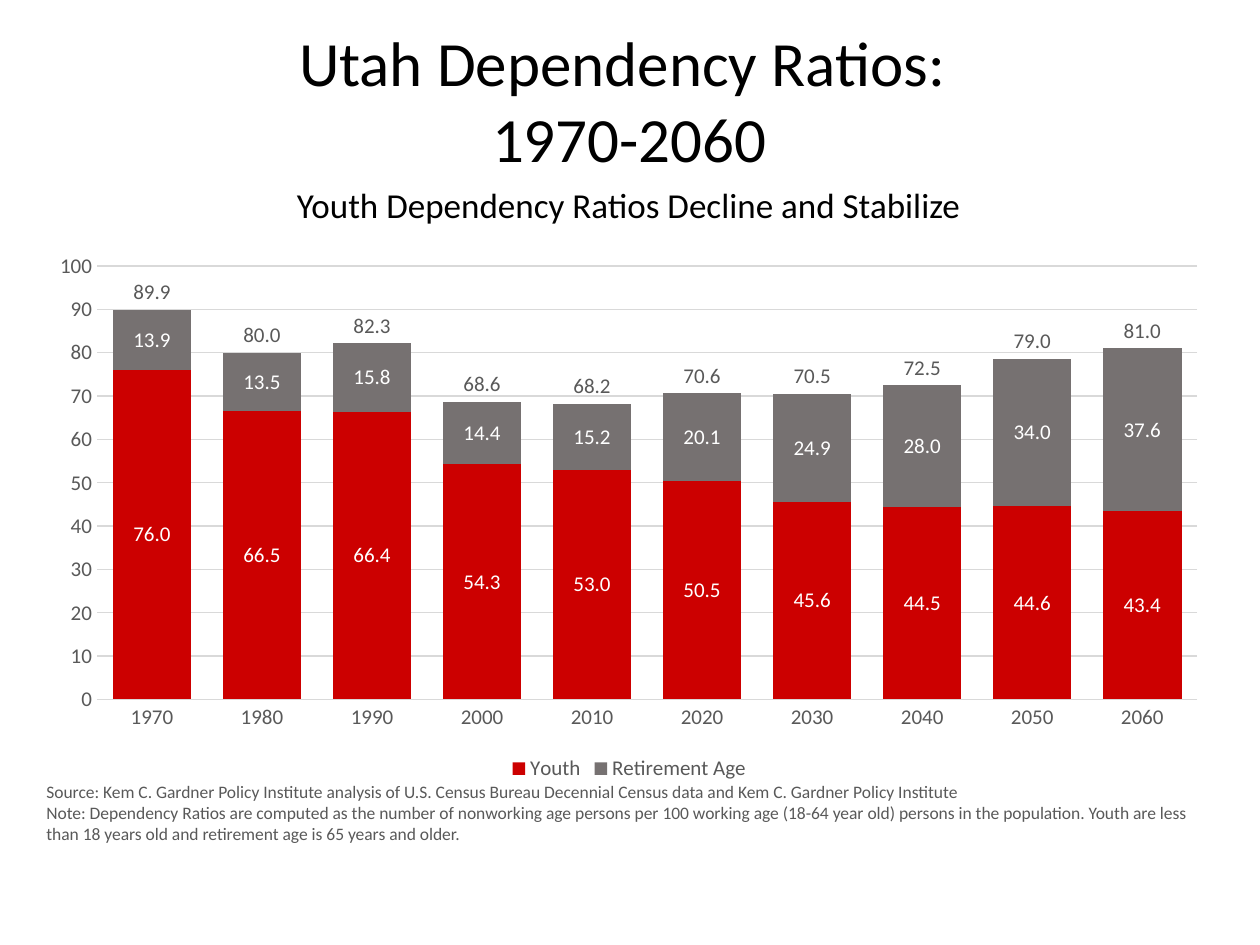
from lxml.etree import SubElement
from pptx import Presentation
from pptx.chart.data import CategoryChartData as ChartData
from pptx.dml.color import RGBColor
from pptx.enum.chart import (
    XL_CHART_TYPE as ChartType,
    XL_LABEL_POSITION as LabelPosition,
    XL_LEGEND_POSITION as LegendPosition,
    XL_TICK_MARK as TickMark,
)
from pptx.enum.text import MSO_ANCHOR as Anchor, PP_ALIGN as Align
from pptx.oxml import parse_xml
from pptx.oxml.ns import nsdecls, qn
from pptx.util import Inches, Pt

FONT = "Calibri"
BLACK, GREY, GRID, WHITE = "000000", "595959", "D9D9D9", "FFFFFF"
HEADING = ["Utah Dependency Ratios: ", "1970-2060"]
SUBTITLE = ["Youth Dependency Ratios Decline and Stabilize"]
NOTES = [
    "Source: Kem C. Gardner Policy Institute analysis of U.S. Census Bureau "
    "Decennial Census data and Kem C. Gardner Policy Institute",
    "Note: Dependency Ratios are computed as the number of nonworking age persons "
    "per 100 working age (18-64 year old) persons in the population. Youth are less "
    "than 18 years old and retirement age is 65 years and older.",
]
YEARS = [str(year) for year in range(1970, 2061, 10)]
SERIES = [
    ("Youth", [76, 66.5, 66.4, 54.3, 53, 50.5, 45.6, 44.5, 44.6, 43.4],
     "CC0000", WHITE, LabelPosition.CENTER),
    ("Retirement Age", [13.9, 13.5, 15.8, 14.4, 15.2, 20.1, 24.9, 28, 34, 37.6],
     "767171", WHITE, LabelPosition.CENTER),
    ("Series 3", [89.9, 80, 82.3, 68.6, 68.2, 70.6, 70.5, 72.5, 79, 81],
     None, GREY, LabelPosition.INSIDE_BASE),
]
TOTAL_INDEX = 2
PLOT_AREA = {"x": 0.05, "y": 0.04, "w": 0.93, "h": 0.8}


def color(value):
    """Turn a hex string into a colour."""
    return RGBColor.from_string(value)


def set_values(target, values):
    """Set each named attribute of the target."""
    for name, value in values.items():
        setattr(target, name, value)


def set_font(font, size, hex_color):
    """Give a font its name, size and colour."""
    set_values(font, {"name": FONT, "size": Pt(size)})
    font.color.rgb = color(hex_color)


def add_text(page, place, lines, size, hex_color, align=Align.LEFT, **frame_format):
    """Add a wrapped text box with one paragraph for each line."""
    box = page.shapes.add_textbox(*map(Inches, place))
    frame = box.text_frame
    set_values(frame, {"word_wrap": True, **frame_format})
    for index, line in enumerate(lines):
        para = frame.add_paragraph() if index else frame.paragraphs[0]
        para.alignment = align
        span = para.add_run()
        span.text = line
        set_font(span.font, size, hex_color)


def style_axes(chart):
    """Style the year axis, the ratio axis and the gridlines."""
    for axis in (chart.category_axis, chart.value_axis):
        set_values(axis, {"major_tick_mark": TickMark.NONE,
                          "minor_tick_mark": TickMark.NONE})
        set_font(axis.tick_labels.font, 12, GREY)
    ratio_axis = chart.value_axis
    set_values(ratio_axis, {"minimum_scale": 0, "maximum_scale": 100, "major_unit": 10,
                            "has_major_gridlines": True})
    ratio_axis.format.line.fill.background()
    for line in (chart.category_axis.format.line, ratio_axis.major_gridlines.format.line):
        line.color.rgb = color(GRID)
        line.width = Pt(0.75)


def style_series(series, fill_color, label_color, position):
    """Fill a series and show its values."""
    fill = series.format.fill
    if fill_color:
        fill.solid()
        fill.fore_color.rgb = color(fill_color)
    else:
        fill.background()
    series.format.line.fill.background()
    labels = series.data_labels
    set_values(labels, {"show_value": True, "position": position,
                        "number_format": "#,##0.0", "number_format_is_linked": False})
    set_font(labels.font, 12, label_color)


def add_legend(chart):
    """Add a bottom legend that leaves out the totals."""
    chart.has_legend = True
    legend = chart.legend
    set_values(legend, {"position": LegendPosition.BOTTOM, "include_in_layout": False})
    set_font(legend.font, 12, GREY)
    entry = parse_xml(
        f'<c:legendEntry {nsdecls("c")}><c:idx val="{TOTAL_INDEX}"/>'
        '<c:delete val="1"/></c:legendEntry>')
    legend._element.find(qn("c:legendPos")).addnext(entry)


def place_plot(chart):
    """Fix the inner plot area as fractions of the chart."""
    plot_area = chart._chartSpace.chart.plotArea
    for old in plot_area.findall(qn("c:layout")):
        plot_area.remove(old)
    layout = parse_xml(f'<c:layout {nsdecls("c")}/>')
    manual = SubElement(layout, qn("c:manualLayout"))
    settings = {"layoutTarget": "inner", "xMode": "edge", "yMode": "edge", **PLOT_AREA}
    for name, value in settings.items():
        SubElement(manual, qn(f"c:{name}")).set("val", str(value))
    plot_area.insert(0, layout)


def add_ratio_chart(page):
    """Add the stacked columns with their totals on top."""
    data = ChartData()
    data.categories = YEARS
    for name, values, *_ in SERIES:
        data.add_series(name, values)
    place = map(Inches, (0.3, 1.94, 9.39, 4.3))
    chart = page.shapes.add_chart(ChartType.COLUMN_STACKED, *place, data).chart
    chart.has_title = False
    set_font(chart.font, 12, GREY)
    plot = chart.plots[0]
    set_values(plot, {"gap_width": 40, "overlap": 100, "vary_by_categories": False})
    for series, (_, _, *style) in zip(plot.series, SERIES):
        style_series(series, *style)
    style_axes(chart)
    add_legend(chart)
    place_plot(chart)


def main():
    """Build and save the slide."""
    deck = Presentation()
    set_values(deck, {"slide_width": Inches(10), "slide_height": Inches(7.5)})
    page = deck.slides.add_slide(deck.slide_layouts[6])
    add_text(page, (0.68, 0.58, 8.62, 1.45), SUBTITLE, 20, BLACK, Align.CENTER,
             vertical_anchor=Anchor.BOTTOM, margin_bottom=Inches(0.24))
    add_ratio_chart(page)
    add_text(page, (0.27, 6.15, 9.46, 0.61), NOTES, 10, GREY)
    add_text(page, (0.3, 0.14, 9.39, 1.31), HEADING, 36, BLACK, Align.CENTER)
    deck.save("out.pptx")


if __name__ == "__main__":
    main()
